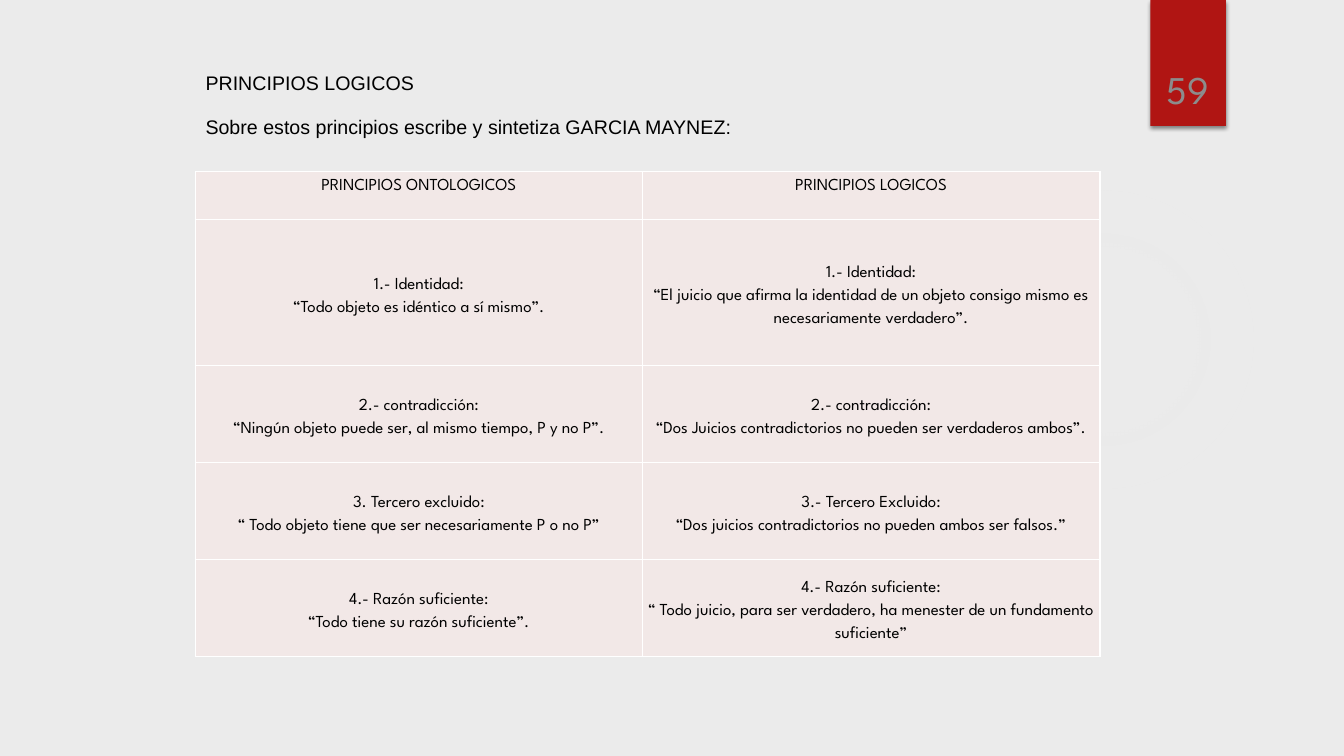
from pptx import Presentation
from pptx import util as u
from pptx.dml.color import RGBColor
from pptx.enum import shapes, text
from pptx.oxml import parse_xml
from pptx.oxml.ns import nsdecls

COLORS = {
    "background": "EBEBEB",
    "glow": "F3F3F3",
    "ribbon": "B01513",
    "cell": "F2E8E7",
    "border": "FFFFFF",
    "text": "000000",
    "number": "8C8C8C",
}
RGB = {name: RGBColor.from_string(value) for name, value in COLORS.items()}


def write(tf, lines, font="League Spartan", size=12, color="text",
          align=text.PP_ALIGN.CENTER, spacing=None, gap=0):
    tf.word_wrap = True
    for i, line in enumerate(lines):
        p = tf.paragraphs[0] if i == 0 else tf.add_paragraph()
        p.alignment = align
        if spacing:
            p.line_spacing = spacing
        if i and gap:
            p.space_before = u.Pt(gap)
        r = p.add_run()
        r.text = line
        r.font.name = font
        r.font.size = u.Pt(size)
        r.font.color.rgb = RGB[color]


prs = Presentation()
prs.slide_width = u.Inches(13.33)
prs.slide_height = u.Inches(7.5)
s = prs.slides.add_slide(prs.slide_layouts[6])
s.background.fill.solid()
s.background.fill.fore_color.rgb = RGB["background"]

glow = s.shapes.add_shape(shapes.MSO_SHAPE.OVAL, u.Inches(9.41), u.Inches(1.83),
                          u.Inches(3.08), u.Inches(3.08))
glow.shadow.inherit = False
glow.line.fill.background()
glow.fill.background()
stops = "".join(
    f'<a:gs pos="{pos * 1000}"><a:srgbClr val="{COLORS["glow"]}">'
    f'<a:alpha val="{alpha * 1000}"/></a:srgbClr></a:gs>'
    for pos, alpha in [(0, 7), (36, 6), (69, 0)])
spPr = glow.element.spPr
spPr.replace(spPr.find("{*}noFill"), parse_xml(
    f'<a:gradFill {nsdecls("a")}><a:gsLst>{stops}</a:gsLst><a:path path="circle">'
    '<a:fillToRect l="50000" t="50000" r="50000" b="50000"/></a:path></a:gradFill>'))

ribbon = s.shapes.add_shape(shapes.MSO_SHAPE.RECTANGLE, u.Inches(11.41), 0,
                            u.Inches(0.75), u.Inches(1.25))
ribbon.shadow.inherit = False
ribbon.fill.solid()
ribbon.fill.fore_color.rgb = RGB["ribbon"]
ribbon.line.fill.background()
ribbon.element.spPr.find("{*}effectLst").append(parse_xml(
    f'<a:outerShdw {nsdecls("a")} blurRad="{u.Pt(3)}" dist="{u.Pt(2)}" dir="5400000" '
    'rotWithShape="0"><a:srgbClr val="000000"><a:alpha val="45000"/></a:srgbClr></a:outerShdw>'))

principles = [
    (["PRINCIPIOS ONTOLOGICOS"], ["PRINCIPIOS LOGICOS"]),
    (["1.- Identidad:", "“Todo objeto es idéntico a sí mismo”."],
     ["1.- Identidad:", "“El juicio que afirma la identidad de un objeto consigo mismo es "
                        "necesariamente verdadero”."]),
    (["2.- contradicción:", "“Ningún objeto puede ser, al mismo tiempo, P y no P”."],
     ["2.- contradicción:", "“Dos Juicios contradictorios no pueden ser verdaderos ambos”."]),
    (["3. Tercero excluido:", "“ Todo objeto tiene que ser necesariamente P o no P”"],
     ["3.- Tercero Excluido:", "“Dos juicios contradictorios no pueden ambos ser falsos.”"]),
    (["4.- Razón suficiente:", "“Todo tiene su razón suficiente”."],
     ["4.- Razón suficiente:", "“ Todo juicio, para ser verdadero, ha menester de un fundamento "
                               "suficiente”"]),
]
table = s.shapes.add_table(len(principles), 2, u.Inches(1.94), u.Inches(1.7),
                           u.Inches(8.97), u.Inches(4.81)).table
table.first_row = False
table.horz_banding = False
for column, width in zip(table.columns, [4.43, 4.54]):
    column.width = u.Inches(width)
for row, height in zip(table.rows, [0.48, 1.45, 0.96, 0.96, 0.96]):
    row.height = u.Inches(height)

for i, row in enumerate(principles):
    for j, lines in enumerate(row):
        cell = table.cell(i, j)
        cell.margin_left = cell.margin_right = u.Inches(0.04)
        cell.margin_top = cell.margin_bottom = 0
        cell.vertical_anchor = text.MSO_ANCHOR.MIDDLE if i else text.MSO_ANCHOR.TOP
        write(cell.text_frame, lines, spacing=1.5)
        tcPr = cell._tc.get_or_add_tcPr()
        for side in ["lnL", "lnR", "lnT", "lnB"]:
            tcPr.append(parse_xml(
                f'<a:{side} {nsdecls("a")} w="{u.Pt(1)}"><a:solidFill>'
                f'<a:srgbClr val="{COLORS["border"]}"/></a:solidFill></a:{side}>'))
        cell.fill.solid()
        cell.fill.fore_color.rgb = RGB["cell"]

heading = s.shapes.add_textbox(u.Inches(1.94), u.Inches(0.65), u.Inches(6.67), u.Inches(0.77))
write(heading.text_frame,
      ["PRINCIPIOS LOGICOS", "Sobre estos principios escribe y sintetiza GARCIA MAYNEZ:"],
      font="Arial", size=14, align=text.PP_ALIGN.JUSTIFY, gap=15)

number = s.shapes.add_textbox(u.Inches(11.32), u.Inches(0.32), u.Inches(0.92), u.Inches(0.84))
number.text_frame.vertical_anchor = text.MSO_ANCHOR.BOTTOM
write(number.text_frame, ["59"], size=28, color="number")

prs.save("out.pptx")
